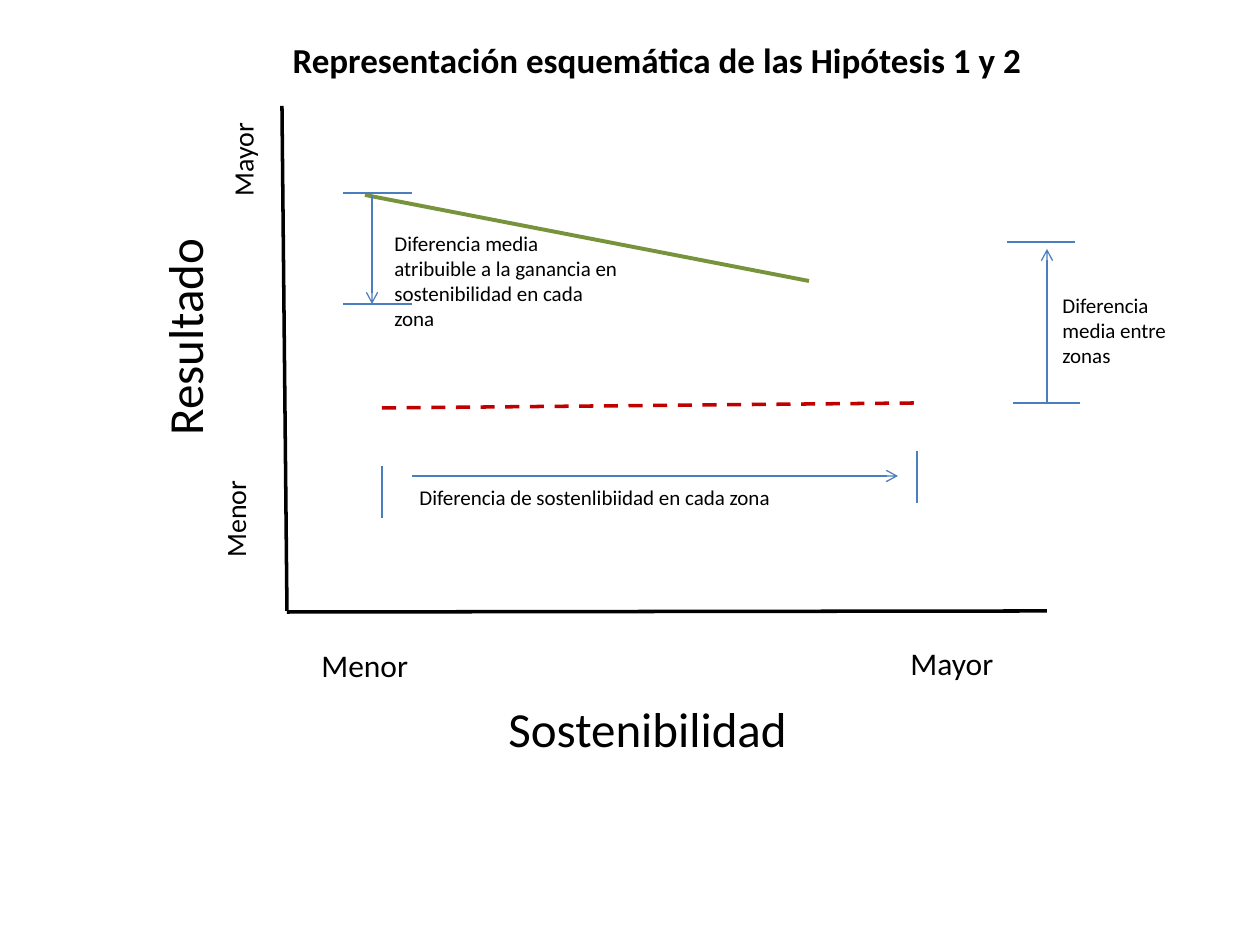
from lxml.etree import SubElement
from pptx import Presentation
from pptx.dml.color import RGBColor
from pptx.enum.dml import MSO_LINE
from pptx.enum.shapes import MSO_CONNECTOR
from pptx.enum.text import MSO_ANCHOR, MSO_AUTO_SIZE, PP_ALIGN
from pptx.oxml.ns import qn
from pptx.util import Emu, Pt

BLACK = RGBColor(0x00, 0x00, 0x00)
RED = RGBColor(0xC0, 0x00, 0x00)
GREEN = RGBColor(0x77, 0x93, 0x3C)
BLUE = RGBColor(0x4B, 0x7E, 0xBC)
PX_PER_INCH = 126


def px(length):
    return Emu(round(length * 914400 / PX_PER_INCH))


def write_text(frame, text, size, font="Calibri", color=BLACK, bold=False,
               wrap=False, align=PP_ALIGN.LEFT):
    frame.word_wrap = wrap
    frame.auto_size = MSO_AUTO_SIZE.SHAPE_TO_FIT_TEXT
    frame.vertical_anchor = MSO_ANCHOR.TOP
    paragraph = frame.paragraphs[0]
    paragraph.alignment = align
    run = paragraph.add_run()
    run.text = text
    run.font.name = font
    run.font.size = Pt(size)
    run.font.bold = bold
    run.font.color.rgb = color


class Diagram:
    """Draws the labels and lines of a schematic chart on one slide."""

    def __init__(self, slide, font="Calibri"):
        self.slide = slide
        self.font = font

    def title(self, text, left, top, width, height, size):
        shape = self.slide.shapes.title
        shape.left, shape.top = px(left), px(top)
        shape.width, shape.height = px(width), px(height)
        write_text(shape.text_frame, text, size, font=self.font, bold=True)

    def label(self, text, left, top, width, height, size, rotation=0, wrap=False):
        shape = self.slide.shapes.add_textbox(px(left), px(top), px(width), px(height))
        shape.rotation = rotation
        write_text(shape.text_frame, text, size, font=self.font, wrap=wrap)

    def line(self, start, end, color=BLUE, width=0.75, dash=None):
        connector = self.slide.shapes.add_connector(
            MSO_CONNECTOR.STRAIGHT, *map(px, start + end))
        connector.line.color.rgb = color
        connector.line.width = Pt(width)
        if dash:
            connector.line.dash_style = dash
        SubElement(connector._element.spPr, qn("a:effectLst"))
        return connector

    def arrow(self, start, end):
        connector = self.line(start, end)
        SubElement(connector.line._get_or_add_ln(), qn("a:tailEnd"), type="arrow")


def main():
    presentation = Presentation()
    presentation.slide_width, presentation.slide_height = px(1260), px(945)
    slide = presentation.slides.add_slide(presentation.slide_layouts[5])
    diagram = Diagram(slide)

    diagram.title("Representación esquemática de las Hipótesis 1 y 2",
                  280, 32, 761, 55, 20)

    diagram.line((282, 106), (287, 611), BLACK, 2)
    diagram.line((1047, 611), (287, 612), BLACK, 2)
    diagram.line((382, 408), (917, 403), RED, 2, MSO_LINE.DASH)
    diagram.line((365, 195), (809, 281), GREEN, 2.25)

    diagram.label("Sostenibilidad", 496, 692, 306, 72, 28)
    diagram.label("Menor", 309, 640, 113, 50, 18)
    diagram.label("Mayor", 898, 638, 110, 50, 18)
    diagram.label("Resultado", 72, 300, 224, 72, 28, rotation=270)
    diagram.label("Menor", 184, 495, 103, 47, 16, rotation=270)
    diagram.label("Mayor", 193, 135, 100, 47, 16, rotation=270)

    for left, right, y in ((1007, 1075, 242), (1013, 1080, 403),
                           (343, 412, 193), (343, 412, 304)):
        diagram.line((left, y), (right, y))
    for x, top in ((382, 466), (917, 451)):
        diagram.line((x, top), (x, top + 52))

    diagram.arrow((1047, 403), (1047, 249))
    diagram.arrow((372, 195), (372, 304))
    diagram.arrow((412, 476), (898, 476))

    diagram.label("Diferencia media entre zonas",
                  1050, 286, 141, 89, 12, wrap=True)
    diagram.label("Diferencia media atribuible a la ganancia en sostenibilidad en cada zona",
                  382, 224, 251, 115, 12, wrap=True)
    diagram.label("Diferencia de sostenlibiidad en cada zona",
                  407, 478, 401, 38, 12, wrap=True)

    presentation.save("out.pptx")


if __name__ == "__main__":
    main()
